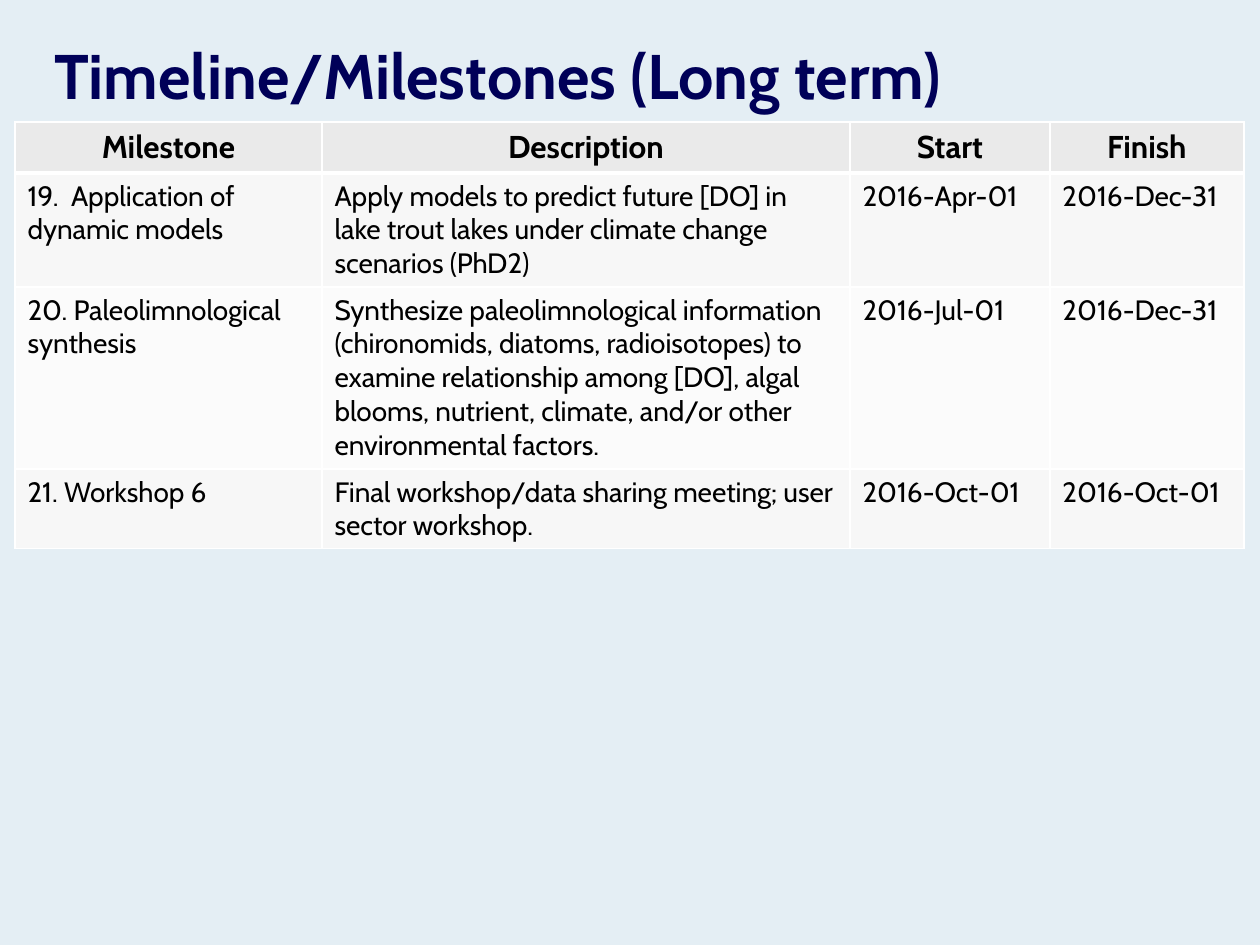
from lxml import etree
from pptx import Presentation, util as u
from pptx.dml.color import RGBColor
from pptx.enum import text
from pptx.oxml import ns

PX = 914400 / 126  # EMU per px
COLORS = {
    "background": "E4EEF4", "title": "000058", "text": "000000",
    "header": "EAEAEA", "odd": "F7F7F7", "even": "FBFBFB", "border": "FFFFFF",
}
COLUMNS = [307, 528, 200, 194]
ROW_HEIGHTS = [51, 114, 182, 79]
MILESTONES = [
    ["Milestone", "Description", "Start", "Finish"],
    ["19.  Application of dynamic models",
     "Apply models to predict future [DO] in lake trout lakes under climate "
     "change scenarios (PhD2)", "2016-Apr-01", "2016-Dec-31"],
    ["20. Paleolimnological synthesis",
     "Synthesize paleolimnological information (chironomids, diatoms, "
     "radioisotopes) to examine relationship among [DO], algal blooms, "
     "nutrient, climate, and/or other environmental factors.",
     "2016-Jul-01", "2016-Dec-31"],
    ["21. Workshop 6",
     "Final workshop/data sharing meeting; user sector workshop.",
     "2016-Oct-01", "2016-Oct-01"],
]


def px(n):
    return u.Emu(round(n * PX))


def rgb(name):
    return RGBColor.from_string(COLORS[name])


class Deck:
    font = "Cabin"

    def __init__(self, width, height):
        self.prs = Presentation()
        self.prs.slide_width, self.prs.slide_height = px(width), px(height)

    def add_slide(self, color):
        self.s = self.prs.slides.add_slide(self.prs.slide_layouts[6])
        fill = self.s.background.fill
        fill.solid()
        fill.fore_color.rgb = rgb(color)

    def set_text(self, tf, words, size, color="text", bold=False, align=text.PP_ALIGN.LEFT):
        tf.text = words
        p = tf.paragraphs[0]
        p.alignment = align
        font = p.runs[0].font
        font.name, font.size, font.bold = self.font, u.Pt(size), bold
        font.color.rgb = rgb(color)

    def title(self, x, y, w, h, words):
        tf = self.s.shapes.add_textbox(px(x), px(y), px(w), px(h)).text_frame
        tf.word_wrap = True
        tf.vertical_anchor = text.MSO_ANCHOR.MIDDLE
        self.set_text(tf, words, 36, "title", bold=True)

    def borders(self, cell, top, bottom):
        tcPr = cell._tc.get_or_add_tcPr()
        widths = {"a:lnL": 1, "a:lnR": 1, "a:lnT": top, "a:lnB": bottom}
        for i, (tag, width) in enumerate(widths.items()):
            ln = etree.Element(ns.qn(tag), w=str(u.Pt(width)))
            fill = etree.SubElement(ln, ns.qn("a:solidFill"))
            etree.SubElement(fill, ns.qn("a:srgbClr"), val=COLORS["border"])
            tcPr.insert(i, ln)  # borders come before the fill

    def table(self, x, y, columns, heights, rows):
        table = self.s.shapes.add_table(
            len(rows), len(columns), px(x), px(y), px(sum(columns)), px(sum(heights))).table
        for column, width in zip(table.columns, columns):
            column.width = px(width)
        for i, words in enumerate(rows):
            table.rows[i].height = px(heights[i])
            header = i == 0
            color = "header" if header else "odd" if i % 2 else "even"
            align = text.PP_ALIGN.CENTER if header else text.PP_ALIGN.LEFT
            for cell, word in zip(table.rows[i].cells, words):
                cell.fill.solid()
                cell.fill.fore_color.rgb = rgb(color)
                self.set_text(cell.text_frame, word, 18 if header else 16,
                              bold=header, align=align)
                # A thick rule separates the header from the body
                self.borders(cell, top=3 if i == 1 else 1, bottom=3 if header else 1)


def main():
    deck = Deck(1260, 945)
    deck.add_slide("background")
    # Title
    deck.title(42, 32, 1187, 84, "Timeline/Milestones (Long term)")
    # Milestone table
    deck.table(15, 122, COLUMNS, ROW_HEIGHTS, MILESTONES)
    deck.prs.save("out.pptx")


if __name__ == "__main__":
    main()
